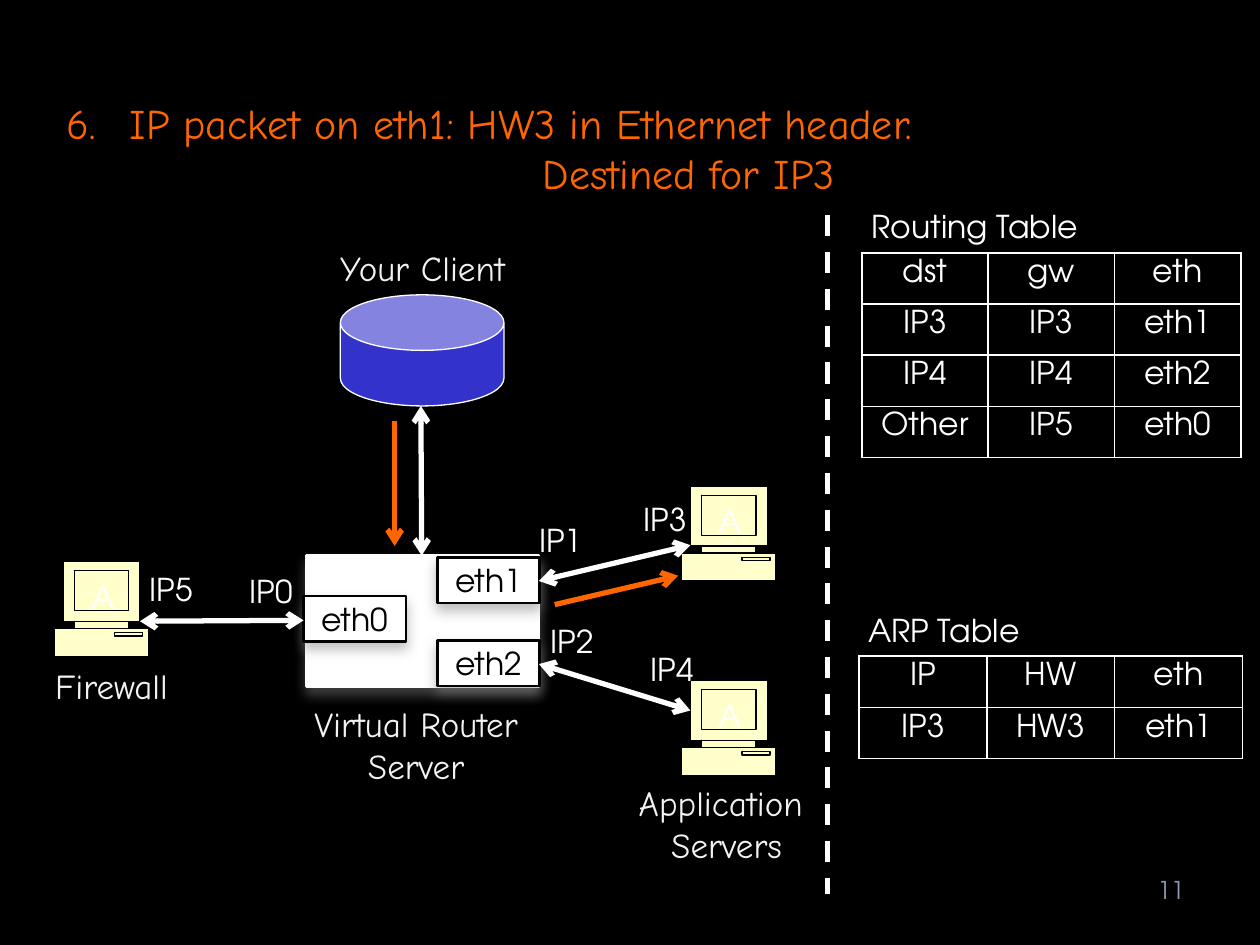
from lxml import etree
from pptx import Presentation
from pptx import util as u
from pptx.dml.color import RGBColor
from pptx.enum import dml, shapes, text
from pptx.oxml.ns import qn

BLACK = RGBColor(0, 0, 0)
WHITE = RGBColor(255, 255, 255)
CAPTION_GREY = RGBColor(0xF2, 0xF2, 0xF2)
NUMBER_GREY = RGBColor(0x8D, 0x9A, 0xB3)
SHADOW_GREY = RGBColor(0x80, 0x80, 0x80)
ORANGE = RGBColor(0xFF, 0x66, 0)
BLUE = RGBColor(0x33, 0x33, 0xCC)
CREAM = RGBColor(0xFF, 0xFF, 0xCC)
SANS = "TeX Gyre Adventor"
HAND = "Comic Neue"
ALIGN = text.PP_ALIGN
RECTANGLE = shapes.MSO_SHAPE.RECTANGLE

CASE = [(42.5, 38), (42.5, 34), (49, 34), (49, 0), (5, 0), (5, 34),
        (11.5, 34), (11.5, 38), (0, 38), (0, 54), (54, 54), (54, 38)]
NECK, SCREEN, SLOT = (11.5, 34, 42.5, 38), (11.5, 5, 42.5, 28), (34.5, 40.5, 50.5, 42.5)


def points(*values):
    return [u.Pt(value) for value in values]


def child(parent, tag, **attributes):
    element = etree.SubElement(parent, qn(tag))
    for name, value in attributes.items():
        element.set(name, str(value))
    return element


def write(frame, lines, size=18, font=SANS, color=WHITE, align=ALIGN.LEFT):
    for index, line in enumerate(lines):
        paragraph = frame.paragraphs[0] if index == 0 else frame.add_paragraph()
        paragraph.alignment = align
        run = paragraph.add_run()
        run.text = line
        run.font.size = u.Pt(size)
        run.font.name = font
        run.font.color.rgb = color


def add_text(slide, box, lines, wrap=False, **style):
    frame = slide.shapes.add_textbox(*points(*box)).text_frame
    frame.word_wrap = wrap
    frame.auto_size = text.MSO_AUTO_SIZE.SHAPE_TO_FIT_TEXT
    write(frame, lines, **style)
    return frame


def paint(shape, fill, line, width):
    shape.shadow.inherit = False
    shape.fill.solid()
    shape.fill.fore_color.rgb = fill
    shape.line.color.rgb = line
    shape.line.width = u.Pt(width)


def add_box(slide, box, line, label=None):
    shape = slide.shapes.add_shape(RECTANGLE, *points(*box))
    paint(shape, WHITE, line, 1.5)
    effects = shape._element.spPr.find(qn("a:effectLst"))
    shadow = child(effects, "a:outerShdw", blurRad=u.Pt(7), dist=u.Pt(4),
                   dir=90 * 60000, rotWithShape=0)
    child(child(shadow, "a:srgbClr", val=SHADOW_GREY), "a:alpha", val=50000)
    if label:
        frame = shape.text_frame
        frame.word_wrap = False
        frame.vertical_anchor = text.MSO_ANCHOR.MIDDLE
        write(frame, [label], color=BLACK, align=ALIGN.CENTER)


def add_can(slide, box):
    can = slide.shapes.add_shape(shapes.MSO_SHAPE.CAN, *points(*box))
    can.adjustments[0] = 0.5
    paint(can, BLUE, WHITE, 0.75)


def add_computer(slide, left, top):
    """Draw a desktop computer; details run out and back so they stroke without cutting holes."""
    def place(corners):
        return [(u.Pt(left + x), u.Pt(top + y)) for x, y in corners]

    start, *rest = place(CASE)
    builder = slide.shapes.build_freeform(*start)
    builder.add_line_segments(rest)
    for x1, y1, x2, y2 in (NECK, SCREEN, SLOT):
        corners = place([(x1, y1), (x2, y1), (x2, y2), (x1, y2), (x1, y1)])
        builder.move_to(*corners[0])
        builder.add_line_segments(corners[1:] + corners[-2::-1], close=False)
    computer = builder.convert_to_shape()
    paint(computer, CREAM, BLACK, 0.75)
    frame = computer.text_frame
    frame.word_wrap = False
    frame.vertical_anchor = text.MSO_ANCHOR.TOP
    frame.margin_left, frame.margin_top = points(21, 9)
    frame.margin_right = frame.margin_bottom = 0
    write(frame, ["A"])


def add_line(slide, ends, color=WHITE, arrows=(), dash=None):
    line = slide.shapes.add_connector(shapes.MSO_CONNECTOR.STRAIGHT, *points(*ends))
    line.line.color.rgb = color
    line.line.width = u.Pt(3)
    if dash:
        line.line.dash_style = dash
    for arrow in arrows:
        child(line.line._get_or_add_ln(), arrow, type="arrow")
    child(line._element.spPr, "a:effectLst")


def add_grid(slide, left, top, column_width, rows):
    row_height = 29.25
    size = (column_width * len(rows[0]), row_height * len(rows))
    table = slide.shapes.add_table(len(rows), len(rows[0]), *points(left, top, *size)).table
    table.first_row = table.horz_banding = False
    for column in table.columns:
        column.width = u.Pt(column_width)
    for row, values in zip(table.rows, rows):
        row.height = u.Pt(row_height)
        for cell, value in zip(row.cells, values):
            write(cell.text_frame, [value], align=ALIGN.CENTER)
            properties = cell._tc.get_or_add_tcPr()
            for side in "LRTB":
                border = child(properties, f"a:ln{side}", w=u.Pt(1))
                child(child(border, "a:solidFill"), "a:srgbClr", val=WHITE)
            cell.fill.background()


def add_heading(slide):
    frame = add_text(slide, (31, 52, 549, 65.5),
                     ["IP packet on eth1: HW3 in Ethernet header.", "Destined for IP3"],
                     wrap=True, size=24, font=HAND, color=ORANGE)
    numbered, indented = [p._p.get_or_add_pPr() for p in frame.paragraphs]
    numbered.set("marL", str(u.Pt(36)))
    numbered.set("indent", str(u.Pt(-36)))
    child(numbered, "a:buAutoNum", type="arabicPeriod", startAt=6)
    indented.set("marL", str(u.Pt(272)))


def main():
    presentation = Presentation()
    presentation.slide_width, presentation.slide_height = points(720, 540)
    slide = presentation.slides.add_slide(presentation.slide_layouts[6])
    slide.background.fill.solid()
    slide.background.fill.fore_color.rgb = BLACK

    number = add_text(slide, (636, 494, 48, 29), ["11"], wrap=True, size=14,
                      color=NUMBER_GREY, align=ALIGN.RIGHT)
    number.vertical_anchor = text.MSO_ANCHOR.MIDDLE

    add_box(slide, (175, 317.5, 133, 75), WHITE)
    for label, left, top in (("eth0", 173.5, 340.5), ("eth2", 250, 366), ("eth1", 250, 318.5)):
        add_box(slide, (left, top, 58.5, 26), BLACK, label)
    for left, top in ((389.5, 278), (389.5, 389), (31, 321)):
        add_computer(slide, left, top)

    both = ("a:headEnd", "a:tailEnd")
    for ends in ((308, 332, 394.5, 311.5), (80, 355, 173.5, 354.5),
                 (308, 379.5, 394.5, 406), (241, 317.5, 240.5, 232)):
        add_line(slide, ends, arrows=both)

    for lines, box, wrap in ((["Virtual Router", "Server"], (147, 398, 181.5, 55.5), True),
                             (["Application ", "Servers"], (355.5, 443, 119.5, 55.5), False),
                             (["Firewall"], (19.5, 376, 88.5, 31.5), False),
                             (["Your Client"], (182, 137.5, 119, 31.5), False)):
        add_text(slide, box, lines, wrap, size=20, font=HAND,
                 color=CAPTION_GREY, align=ALIGN.CENTER)
    add_can(slide, (194.5, 168.5, 93.5, 63.5))

    for label, left, top, width in (
            ("IP0", 135.5, 323.5, 39.5), ("IP1", 301, 294, 39.5), ("IP3", 360.5, 282, 39.5),
            ("IP2", 307.5, 352, 39.5), ("IP5", 78.5, 322, 39.5), ("IP4", 364.5, 368, 39.5),
            ("Routing Table", 491, 115, 134), ("ARP Table", 489, 345.5, 101.5)):
        add_text(slide, (left, top, width, 29), [label])

    add_line(slide, (473, 123, 473, 511), dash=dml.MSO_LINE.DASH)
    add_grid(slide, 492.5, 144.5, 72.2, [("dst", "gw", "eth"), ("IP3", "IP3", "eth1"),
                                         ("IP4", "IP4", "eth2"), ("Other", "IP5", "eth0")])
    add_heading(slide)
    for ends in ((317, 345.5, 387.5, 329), (225.5, 240.5, 225.5, 312)):
        add_line(slide, ends, ORANGE, both[1:])
    add_grid(slide, 491, 375, 73, [("IP", "HW", "eth"), ("IP3", "HW3", "eth1")])
    presentation.save("out.pptx")


if __name__ == "__main__":
    main()
